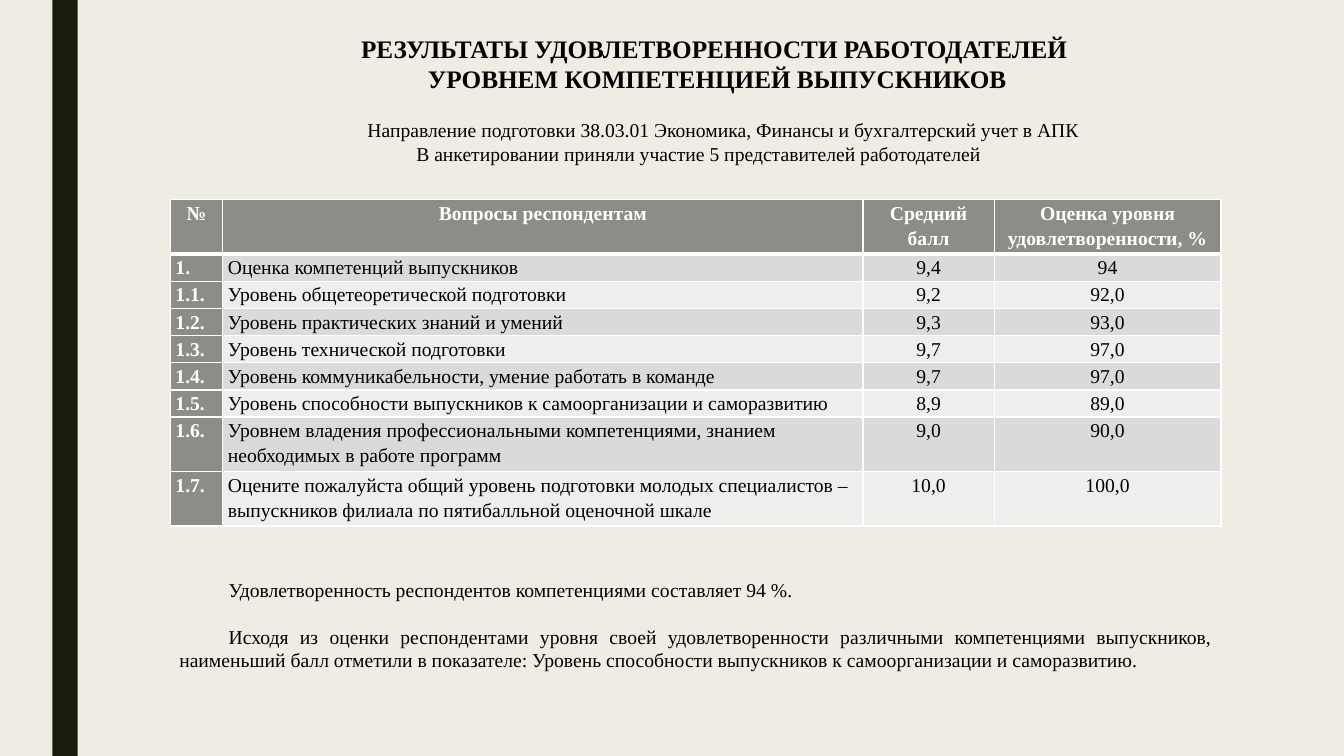
from lxml.etree import SubElement
from pptx import Presentation
from pptx.dml.color import RGBColor
from pptx.enum.shapes import MSO_SHAPE
from pptx.enum.text import MSO_ANCHOR as ANCHOR, MSO_AUTO_SIZE as FIT, PP_ALIGN as ALIGN
from pptx.oxml.ns import qn
from pptx.util import Inches, Pt

PAPER = RGBColor(0xEF, 0xED, 0xE3)
DARK = RGBColor(0x19, 0x1B, 0x0E)
BLACK = RGBColor(0, 0, 0)
WHITE = RGBColor(255, 255, 255)
GREY = RGBColor(0x8C, 0x8D, 0x86)
BANDS = RGBColor(0xEE, 0xEE, 0xED), RGBColor(0xDA, 0xDB, 0xD9)
FONT = "Times New Roman"

HEADS = "№", "Вопросы респондентам", "Средний балл", "Оценка уровня удовлетворенности, %"
ROWS = [
    HEADS,
    ("1.", "Оценка компетенций выпускников", "9,4", "94"),
    ("1.1.", "Уровень общетеоретической подготовки", "9,2", "92,0"),
    ("1.2.", "Уровень практических знаний и умений", "9,3", "93,0"),
    ("1.3.", "Уровень технической подготовки", "9,7", "97,0"),
    ("1.4.", "Уровень коммуникабельности, умение работать в команде", "9,7", "97,0"),
    ("1.5.", "Уровень способности выпускников к самоорганизации и саморазвитию", "8,9", "89,0"),
    ("1.6.", "Уровнем владения профессиональными компетенциями, знанием "
             "необходимых в работе программ", "9,0", "90,0"),
    ("1.7.", "Оцените пожалуйста общий уровень подготовки молодых специалистов – "
             "выпускников филиала по пятибалльной оценочной шкале", "10,0", "100,0"),
]
WIDTHS = 0.52, 6.35, 1.3, 2.25
LINE = 0.27
TALL = 0, 7, 8


def write(frame, *lines, size=14, color=BLACK, bold=False, align=ALIGN.LEFT,
          indents=None, spacing=1.0, after=0):
    frame.word_wrap = True
    for i, line in enumerate(lines):
        para = frame.paragraphs[0] if i == 0 else frame.add_paragraph()
        para.alignment = align
        para.line_spacing = spacing
        para.space_after = Pt(after)
        if indents:
            props = para._p.get_or_add_pPr()
            props.set("marL", "0")
            props.set("indent", str(Inches(indents[i])))
        run = para.add_run()
        run.text = line
        font = run.font
        font.name, font.size, font.bold = FONT, Pt(size), bold
        font.color.rgb = color


def edge(cell, side, width):
    line = SubElement(cell._tc.get_or_add_tcPr(), qn("a:ln" + side), w=str(Pt(width)))
    fill = SubElement(line, qn("a:solidFill"))
    SubElement(fill, qn("a:srgbClr"), val=str(WHITE))


class Page:
    """Holds the current slide and draws its elements in one style."""

    def __init__(self, deck):
        self.slide = deck.slides.add_slide(deck.slide_layouts[5])
        self.shapes = self.slide.shapes
        fill = self.slide.background.fill
        fill.solid()
        fill.fore_color.rgb = PAPER

    def bar(self, *box):
        bar = self.shapes.add_shape(MSO_SHAPE.RECTANGLE, *map(Inches, box))
        bar.shadow.inherit = False
        bar.fill.solid()
        bar.fill.fore_color.rgb = DARK
        bar.line.fill.background()

    def title(self, *lines, box):
        title = self.shapes.title
        title.left, title.top, title.width, title.height = map(Inches, box)
        frame = title.text_frame
        frame.auto_size = FIT.NONE
        frame.vertical_anchor = ANCHOR.TOP
        write(frame, *lines, size=18, bold=True, align=ALIGN.CENTER)

    def text(self, *lines, box, anchor=ANCHOR.TOP, **style):
        frame = self.shapes.add_textbox(*map(Inches, box)).text_frame
        frame.vertical_anchor = anchor
        write(frame, *lines, **style)

    def table(self, rows, left, top):
        heights = [LINE * 2 if i in TALL else LINE for i in range(len(rows))]
        size = left, top, sum(WIDTHS), sum(heights)
        table = self.shapes.add_table(len(rows), len(WIDTHS), *map(Inches, size)).table
        for col, width in zip(table.columns, WIDTHS):
            col.width = Inches(width)
        for r, values in enumerate(rows):
            table.rows[r].height = Inches(heights[r])
            for c, value in enumerate(values):
                self.cell(table.cell(r, c), value, r, c)

    def cell(self, cell, value, r, c):
        head = r == 0 or c == 0
        cell.margin_left = cell.margin_right = Inches(0.05)
        cell.margin_top = cell.margin_bottom = 0
        widths = {"L": 1, "R": 1, "T": 3 if r == 1 else 1, "B": 3 if r == 0 else 1}
        for side, width in widths.items():
            edge(cell, side, width)
        cell.fill.solid()
        cell.fill.fore_color.rgb = GREY if head else BANDS[r % 2]
        align = ALIGN.CENTER if r == 0 or c > 1 else ALIGN.LEFT
        write(cell.text_frame, value, color=WHITE if head else BLACK, bold=head,
              align=align, spacing=1.15)


def main():
    deck = Presentation()
    deck.slide_width, deck.slide_height = Inches(13.33), Inches(7.5)
    page = Page(deck)
    page.bar(0.52, 0, 0.25, 7.5)
    page.title("РЕЗУЛЬТАТЫ УДОВЛЕТВОРЕННОСТИ РАБОТОДАТЕЛЕЙ ",
               "УРОВНЕМ КОМПЕТЕНЦИЕЙ ВЫПУСКНИКОВ", box=(0.14, 0.28, 13.95, 0.71))
    page.text("Направление подготовки 38.03.01 Экономика, Финансы и бухгалтерский учет в АПК",
              "В анкетировании приняли участие 5 представителей работодателей",
              box=(1.49, 1.12, 10.39, 0.57), anchor=ANCHOR.MIDDLE,
              align=ALIGN.CENTER, indents=(0.98, 0.49))
    page.text("Удовлетворенность респондентов компетенциями составляет 94 %.",
              "Исходя из оценки респондентами уровня своей удовлетворенности различными "
              "компетенциями выпускников, наименьший балл отметили в показателе: Уровень "
              "способности выпускников к самоорганизации и саморазвитию.",
              box=(1.68, 5.68, 10.44, 1.04), align=ALIGN.JUSTIFY,
              indents=(0.49, 0.49), after=17)
    page.table(ROWS, 1.69, 1.98)
    deck.save("out.pptx")


if __name__ == "__main__":
    main()
